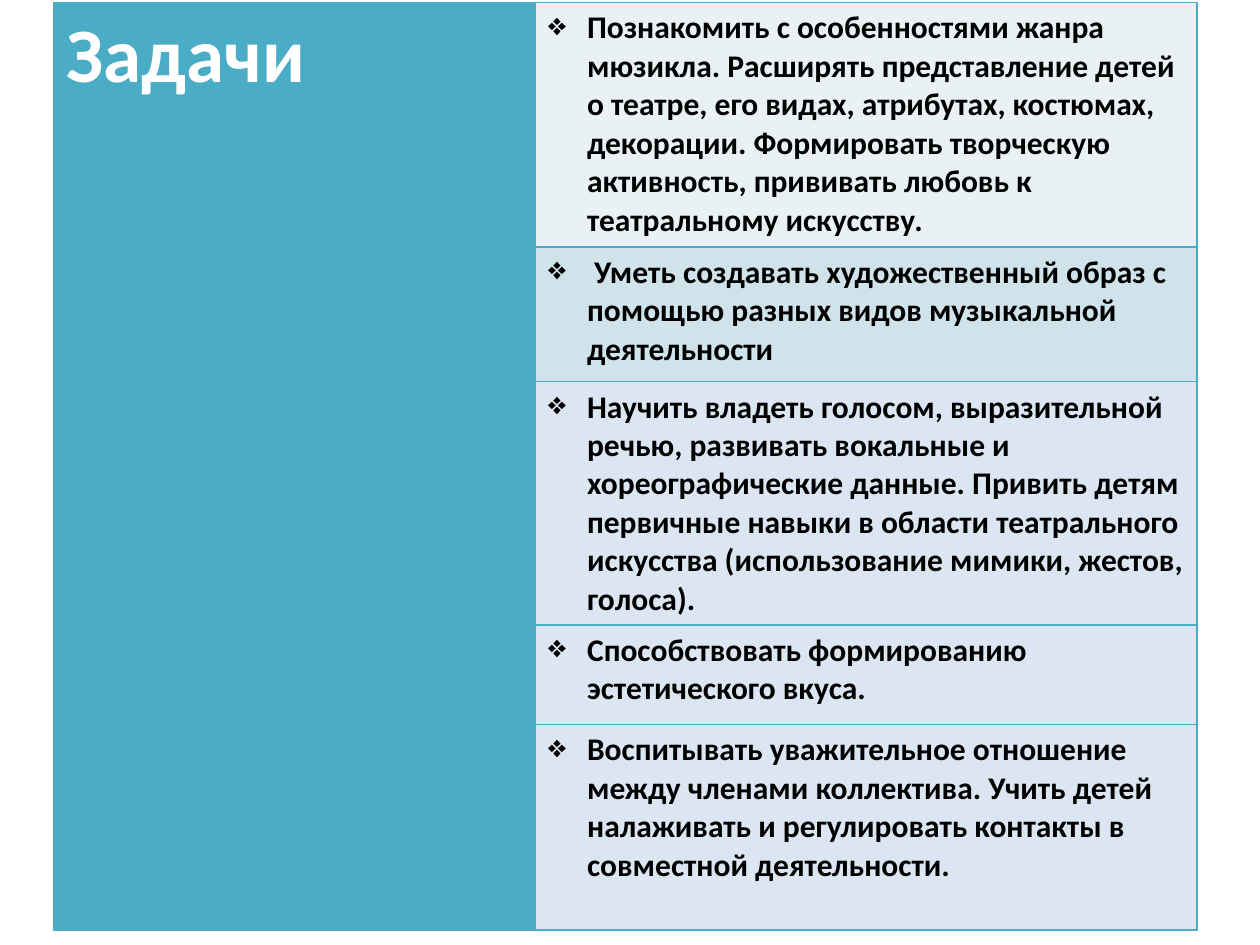
from lxml import etree
from pptx import Presentation
from pptx import util as u
from pptx.dml.color import RGBColor
from pptx.oxml.ns import qn

FONT = "Calibri"
ACCENT = "4BACC6"
TITLE = "Задачи"
TASKS = [
    ("Познакомить с особенностями жанра мюзикла. Расширять представление детей о театре, "
     "его видах, атрибутах, костюмах, декорации. Формировать творческую активность, "
     "прививать любовь к театральному искусству.", "E9F1F5", 1.94),
    (" Уметь создавать художественный образ с помощью разных видов музыкальной "
     "деятельности", "D0E3EA", 1.07),
    ("Научить владеть голосом, выразительной речью, развивать вокальные и "
     "хореографические данные. Привить детям первичные навыки в области театрального "
     "искусства (использование мимики, жестов, голоса).", "DCE6F2", 1.93),
    ("Способствовать формированию эстетического вкуса.", "DCE6F2", 0.79),
    ("Воспитывать уважительное отношение между членами коллектива. Учить детей "
     "налаживать и регулировать контакты в совместной деятельности.", "DCE6F2", 1.63),
]
COLUMN_WIDTHS = [3.82, 5.25]
LEFT, TOP = 0.43, 0.02
BULLET, INDENT = "❖", 0.31


def color(value):
    return RGBColor.from_string(value)


def style_cell(cell, fill):
    properties = cell._tc.get_or_add_tcPr()
    for side in ("lnL", "lnR", "lnT", "lnB"):
        line = etree.SubElement(properties, qn(f"a:{side}"), w=str(u.Pt(1)))
        solid = etree.SubElement(line, qn("a:solidFill"))
        etree.SubElement(solid, qn("a:srgbClr"), val=ACCENT)
    cell.fill.solid()
    cell.fill.fore_color.rgb = color(fill)


def write(cell, content, size, font_color):
    cell.text_frame.text = content
    paragraph = cell.text_frame.paragraphs[0]
    for run in paragraph.runs:
        run.font.name = FONT
        run.font.size = u.Pt(size)
        run.font.bold = True
        run.font.color.rgb = color(font_color)
    return paragraph


def add_bullet(paragraph):
    properties = paragraph._p.get_or_add_pPr()
    properties.set("marL", str(u.Inches(INDENT)))
    properties.set("indent", str(-u.Inches(INDENT)))
    etree.SubElement(properties, qn("a:buChar"), char=BULLET)


def main():
    presentation = Presentation()
    presentation.slide_width = u.Inches(10)
    presentation.slide_height = u.Inches(7.5)
    slide = presentation.slides.add_slide(presentation.slide_layouts[6])

    table = slide.shapes.add_table(
        len(TASKS), len(COLUMN_WIDTHS), u.Inches(LEFT), u.Inches(TOP),
        u.Inches(sum(COLUMN_WIDTHS)), u.Inches(sum(task[2] for task in TASKS)),
    ).table
    for column, width in zip(table.columns, COLUMN_WIDTHS):
        column.width = u.Inches(width)

    for index, (content, fill, height) in enumerate(TASKS):
        table.rows[index].height = u.Inches(height)
        style_cell(table.cell(index, 0), ACCENT)
        task_cell = table.cell(index, 1)
        style_cell(task_cell, fill)
        add_bullet(write(task_cell, content, 18, "000000"))
    write(table.cell(0, 0), TITLE, 44, "FFFFFF")

    presentation.save("out.pptx")


if __name__ == "__main__":
    main()
